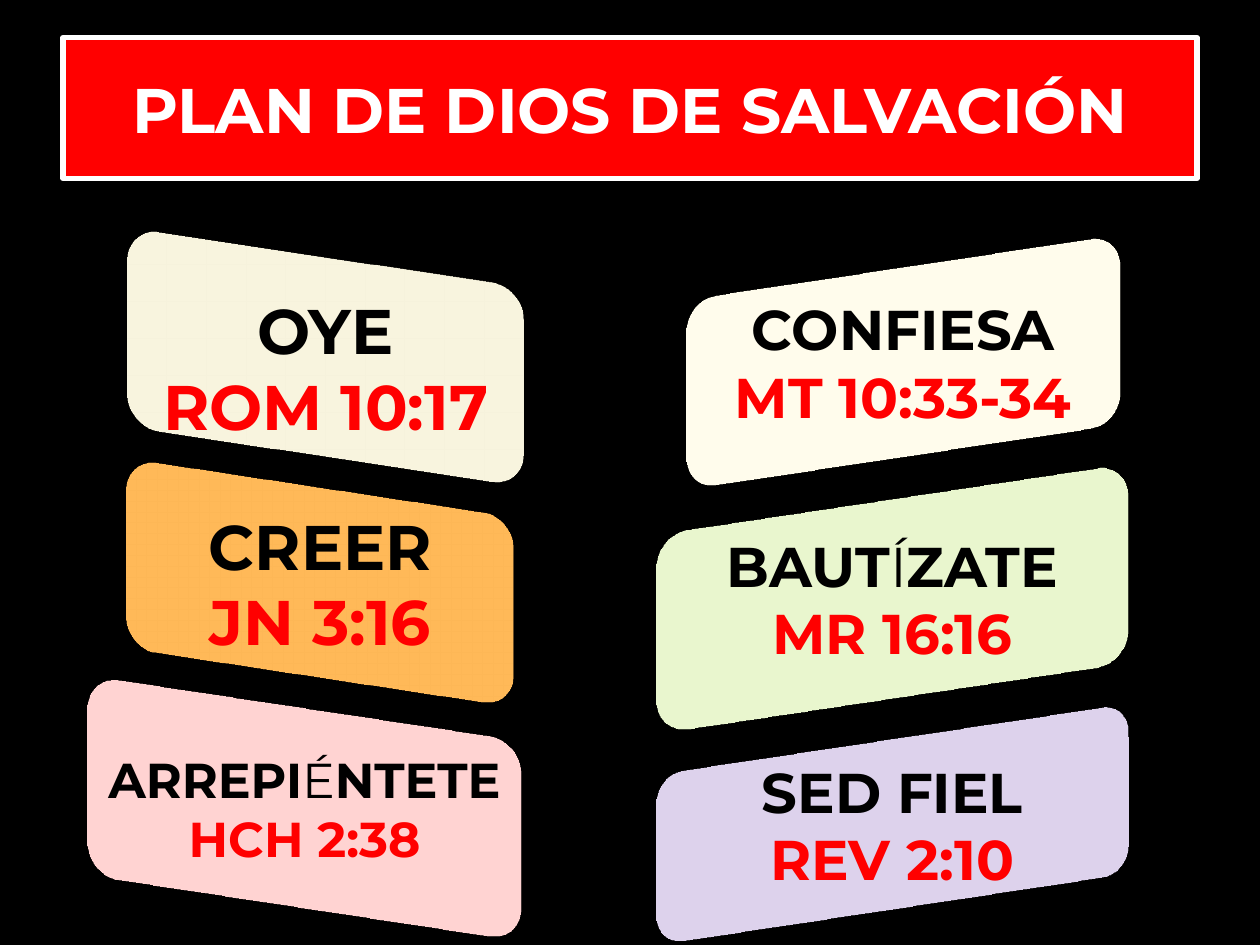
from lxml import etree
from pptx import Presentation
from pptx.dml.color import RGBColor
from pptx.enum.shapes import MSO_SHAPE
from pptx.enum.text import MSO_ANCHOR, PP_ALIGN
from pptx.oxml.ns import qn
from pptx.util import Cm, Pt

RECT = MSO_SHAPE.RECTANGLE
ROUNDED = MSO_SHAPE.ROUNDED_RECTANGLE
MIDDLE = MSO_ANCHOR.MIDDLE
CENTER = PP_ALIGN.CENTER
FONT = "Montserrat"
FACING_LEFT = "isometricOffAxis2Left"
FACING_RIGHT = "isometricOffAxis1Right"
COLORS = {
    "black": "000000", "white": "FFFFFF", "red": "FF0000",
    "sand": "DDD9C3", "orange": "FF9F3F", "pink": "E6B9B8",
    "cream": "FDEADA", "green": "D7E4BD", "lilac": "CCC1DA",
}
STEPS = [
    (["OYE"], "ROM 10:17", 36, "sand", FACING_LEFT, (2.12, 5.08, 8.89, 4.23), 0.55),
    (["CREER"], "JN 3:16", 36, "orange", FACING_LEFT, (2.12, 9.74, 8.68, 4.02), 0.13),
    (["ARREPI", "É", "NTETE"], "HCH 2:38", 28, "pink", FACING_LEFT,
     (1.27, 14.18, 9.74, 4.23), 0.13),
    (["CONFIESA"], "MT 10:33-34", 32, "cream", FACING_RIGHT, (13.34, 5.29, 9.74, 4.02), 0.13),
    (["BAUT", "Í", "ZATE"], "MR 16:16", 32, "green", FACING_RIGHT,
     (12.7, 9.95, 10.58, 4.23), 0.13),
    (["SED FIEL"], "REV 2:10", 32, "lilac", FACING_RIGHT, (12.7, 14.82, 10.58, 3.6), 0.13),
]


def rgb(name):
    """Return the named palette colour."""
    return RGBColor.from_string(COLORS[name])


def add_panel(slide, outline, box, fill):
    """Add a filled shape without line or shadow, ready for centred text."""
    panel = slide.shapes.add_shape(outline, *(Cm(length) for length in box))
    panel.shadow.inherit = False
    panel.fill.solid()
    panel.fill.fore_color.rgb = rgb(fill)
    panel.line.fill.background()
    panel.text_frame.word_wrap = True
    panel.text_frame.vertical_anchor = MIDDLE
    return panel


def write(paragraph, text, size=36, color="black", bold=True):
    """Append a formatted run to a centred paragraph."""
    paragraph.alignment = CENTER
    run = paragraph.add_run()
    run.text = text
    run.font.name = FONT
    run.font.size = Pt(size)
    run.font.bold = bold
    run.font.color.rgb = rgb(color)


def tilt(panel, camera):
    """Turn a panel in space with a preset camera."""
    scene = etree.SubElement(panel._element.spPr, qn("a:scene3d"))
    etree.SubElement(scene, qn("a:camera"), prst=camera)
    etree.SubElement(scene, qn("a:lightRig"), rig="threePt", dir="t")


def add_title(slide, text):
    """Add the framed title banner."""
    banner = add_panel(slide, RECT, (1.27, 0.76, 22.86, 2.84), "red")
    banner.line.color.rgb = rgb("white")
    banner.line.width = Pt(3)
    write(banner.text_frame.paragraphs[0], text, color="white")


def add_step(slide, word_parts, verse, size, fill, camera, box, top_inset):
    """Add a tilted card with a step and its verse."""
    card = add_panel(slide, ROUNDED, box, fill)
    tilt(card, camera)
    card.text_frame.margin_top = Cm(top_inset)
    step_line = card.text_frame.paragraphs[0]
    for index, part in enumerate(word_parts):
        write(step_line, part, size=size, bold=index != 1)
    write(card.text_frame.add_paragraph(), verse, size=size, color="red")


def main():
    """Build and save the slide."""
    deck = Presentation()
    deck.slide_width, deck.slide_height = Cm(25.4), Cm(19.05)
    slide = deck.slides.add_slide(deck.slide_layouts[6])
    slide.background.fill.solid()
    slide.background.fill.fore_color.rgb = rgb("black")
    add_title(slide, "PLAN DE DIOS DE SALVACIÓN")
    for step in STEPS:
        add_step(slide, *step)
    deck.save("out.pptx")


if __name__ == "__main__":
    main()
